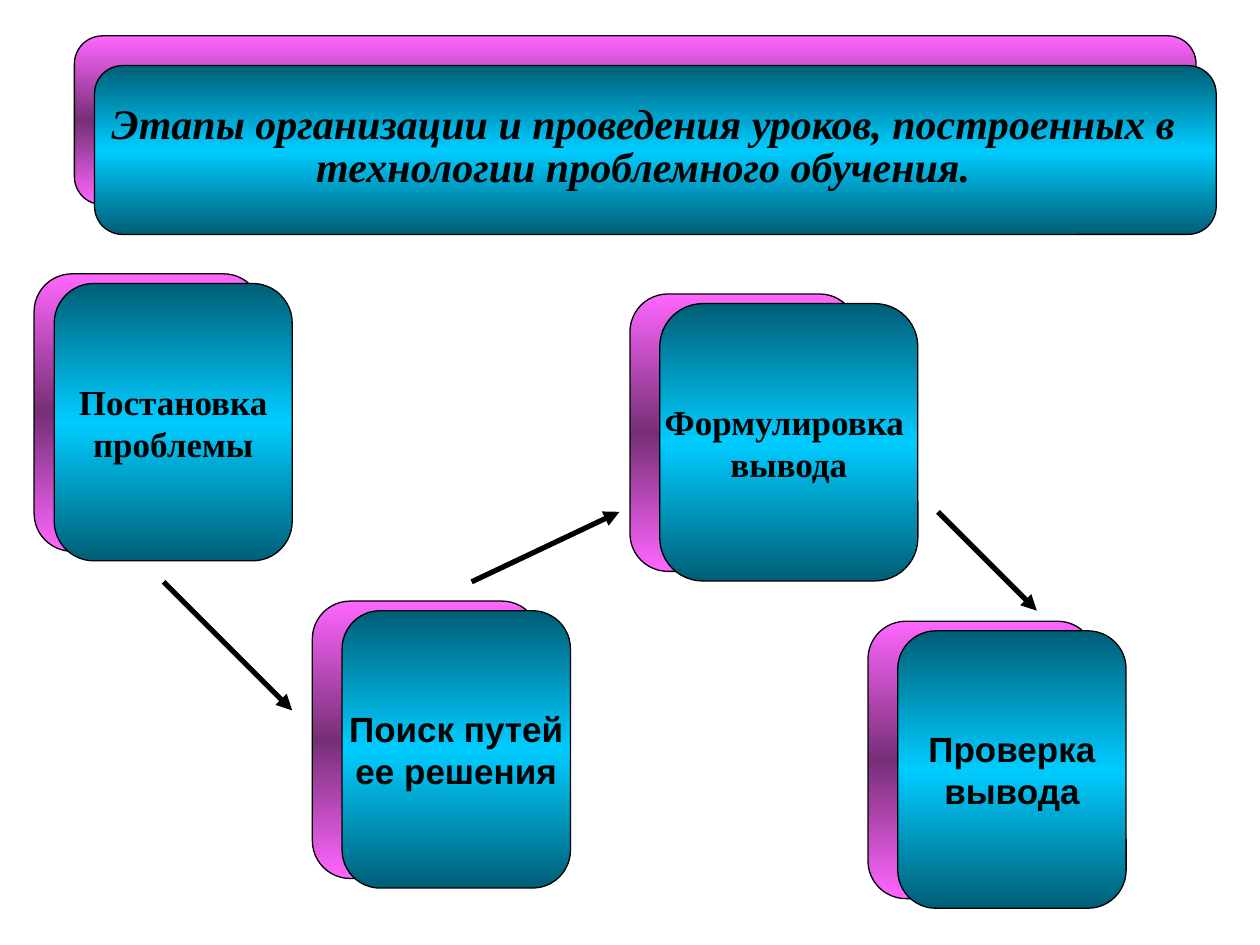
from copy import deepcopy

from lxml import etree
from pptx import Presentation
from pptx.dml.color import RGBColor
from pptx.enum.shapes import MSO_CONNECTOR, MSO_SHAPE
from pptx.enum.text import MSO_ANCHOR, PP_ALIGN
from pptx.oxml.ns import qn
from pptx.util import Pt

CARD = MSO_SHAPE.FLOWCHART_ALTERNATE_PROCESS
STRAIGHT = MSO_CONNECTOR.STRAIGHT
MIDDLE = MSO_ANCHOR.MIDDLE
CENTER = PP_ALIGN.CENTER

BLACK = "000000"
PINK = ("FF66FF", "762F76", "FF66FF")
BLUE = ("005E76", "00CCFF", "005E76")
SERIF, SANS = "Times New Roman", "Arial"


def rgb(value):
    return RGBColor.from_string(value)


class SlideBuilder:
    def __init__(self, slide):
        self.shapes = slide.shapes

    def card(self, x, y, w, h, colors):
        sp = self.shapes.add_shape(CARD, Pt(x), Pt(y), Pt(w), Pt(h))
        sp.shadow.inherit = False
        sp.line.color.rgb = rgb(BLACK)
        sp.line.width = Pt(0.75)
        # A new gradient has two stops: add the middle one
        sp.fill.gradient()
        sp.fill.gradient_angle = 90
        stops = sp._element.spPr.find(".//" + qn("a:gsLst"))
        stops.insert(1, deepcopy(stops[0]))
        for i, (stop, color) in enumerate(zip(sp.fill.gradient_stops, colors)):
            stop.position = i / 2
            stop.color.rgb = rgb(color)
        return sp

    def label(self, sp, lines, font, size, wrap=False, italic=False, spacing=None):
        tf = sp.text_frame
        tf.word_wrap = wrap
        tf.vertical_anchor = MIDDLE
        for i, line in enumerate(lines):
            p = tf.add_paragraph() if i else tf.paragraphs[0]
            p.alignment = CENTER
            p.line_spacing = spacing
            r = p.add_run()
            r.text = line
            r.font.name = font
            r.font.size = Pt(size)
            r.font.bold = True
            r.font.italic = italic
            r.font.color.rgb = rgb(BLACK)

    def title(self, x, y, w, h, text):
        box = self.shapes.add_textbox(Pt(x), Pt(y), Pt(w), Pt(h))
        self.label(box, [text], SERIF, 24, wrap=True, italic=True, spacing=0.85)

    def stage(self, x, y, dx, w, lines, font):
        self.card(x, y, 130, 158.5, PINK)
        front = self.card(x + dx, y + 5.5, w, 158.5, BLUE)
        self.label(front, lines, font, 20)

    def arrow(self, x1, y1, x2, y2):
        c = self.shapes.add_connector(STRAIGHT, Pt(x1), Pt(y1), Pt(x2), Pt(y2))
        c.line.color.rgb = rgb(BLACK)
        c.line.width = Pt(3)
        props = c._element.spPr
        etree.SubElement(props.find(qn("a:ln")), qn("a:tailEnd"), type="triangle")
        etree.SubElement(props, qn("a:effectLst"))


def main():
    prs = Presentation()
    prs.slide_width, prs.slide_height = Pt(720), Pt(540)
    s = SlideBuilder(prs.slides.add_slide(prs.slide_layouts[6]))

    # Title banner
    s.card(42.5, 20.5, 641, 96.5, PINK)
    s.card(54, 37.5, 641, 96.5, BLUE)
    s.title(24.5, 32, 686, 105,
            "Этапы организации и проведения уроков, построенных в "
            "технологии проблемного обучения.")

    # Stages: left, top, front offset, front width, lines, font
    stages = [
        (19.5, 156.5, 11.5, 136, ["Постановка", "проблемы"], SERIF),
        (178.5, 343.5, 17, 130.5, ["Поиск путей", "ее решения"], SANS),
        (360, 168, 17, 147.5, ["Формулировка ", "вывода"], SERIF),
        (496, 355, 17, 130.5, ["Проверка", "вывода"], SANS),
    ]
    for stage in stages:
        s.stage(*stage)

    # Arrows between stages
    for ends in [(93.5, 332.5, 167, 406), (269.5, 332.5, 354, 292.5),
                 (536, 292.5, 592.5, 349)]:
        s.arrow(*ends)

    prs.save("out.pptx")


if __name__ == "__main__":
    main()
